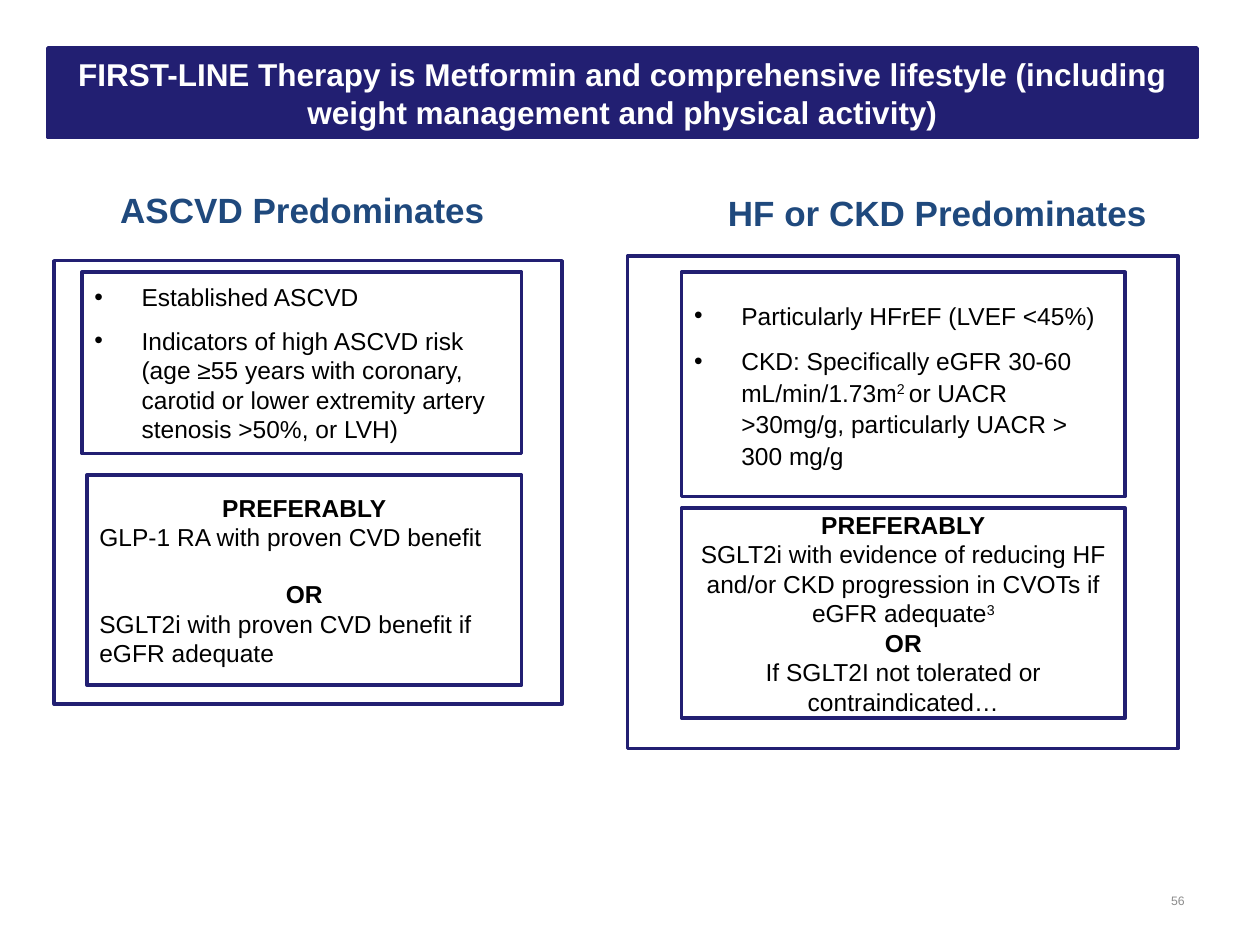
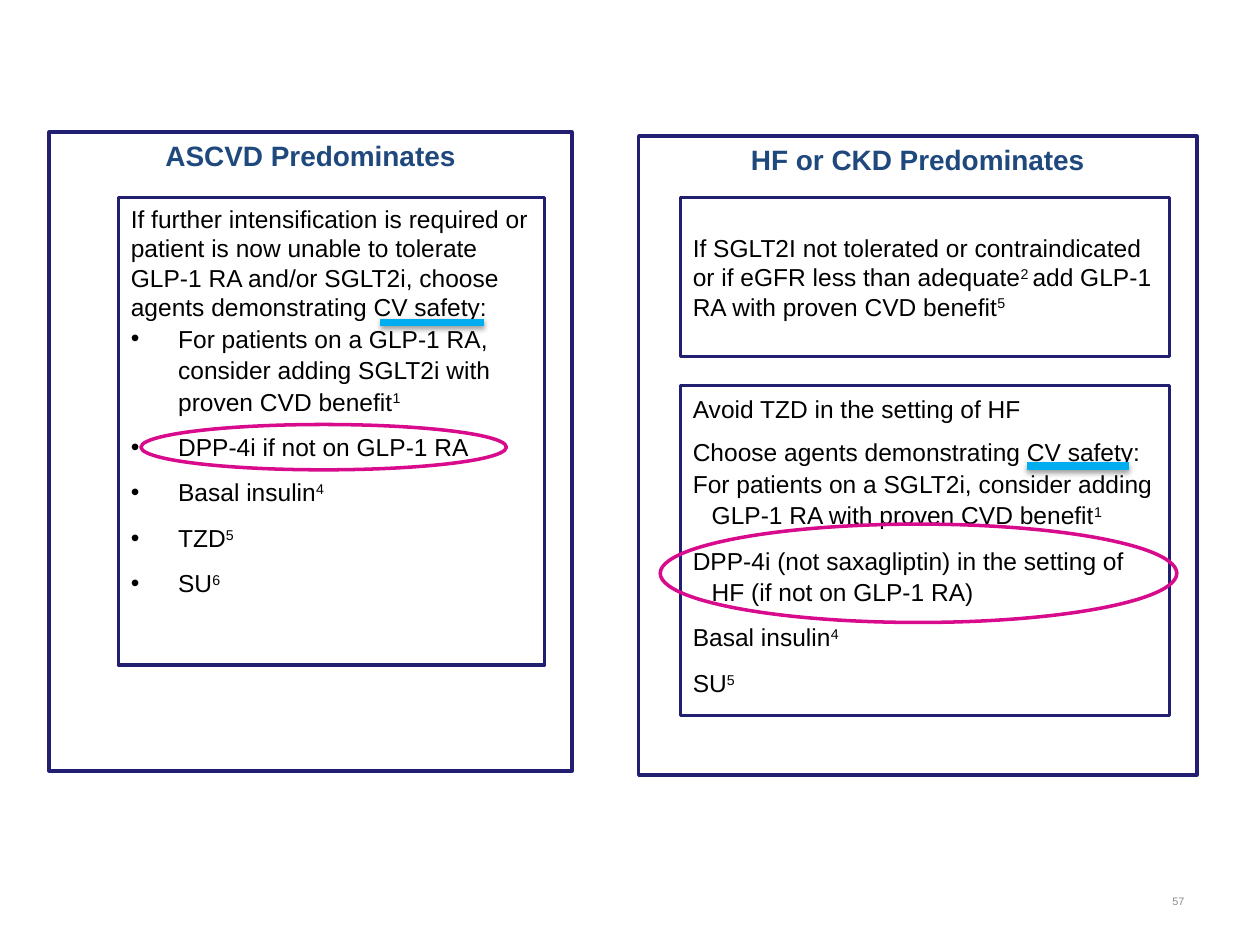
from dataclasses import dataclass
from typing import Optional

from lxml.etree import SubElement
from pptx import Presentation
from pptx.dml.color import RGBColor
from pptx.enum.shapes import MSO_CONNECTOR as Connector, MSO_SHAPE as Preset
from pptx.enum.text import MSO_ANCHOR as Anchor, PP_ALIGN as Align
from pptx.oxml.ns import qn
from pptx.util import Pt


@dataclass(frozen=True)
class Theme:
    font: str = "Arial"
    navy: str = "221F72"
    blue: str = "1F497D"
    black: str = "000000"
    white: str = "FFFFFF"
    grey: str = "8C8C8C"
    magenta: str = "D80B8C"
    cyan: str = "00AEEF"
    banner: float = 18
    heading: float = 20
    panel_title: float = 16
    body: float = 14
    border: float = 2
    marker: float = 4.5


THEME = Theme()


@dataclass(frozen=True)
class Area:
    left: float
    top: float
    width: float
    height: float

    def lengths(self) -> tuple:
        return Pt(self.left), Pt(self.top), Pt(self.width), Pt(self.height)


@dataclass(frozen=True)
class Style:
    size: float = THEME.body
    color: str = THEME.black
    bold: bool = False
    align: Align = Align.LEFT
    indent: float = 0
    bullet: bool = False
    spacing: float = 1
    before: float = 0
    after: float = 0


PLAIN = Style()
CENTERED = Style(align=Align.CENTER)
STRONG = Style(bold=True, align=Align.CENTER)
STRONG_APART = Style(bold=True, align=Align.CENTER, before=16)
BULLET = Style(indent=27, bullet=True, after=8)
LOOSE_BULLET = Style(indent=27, bullet=True, spacing=1.07, after=8)
HANGING = Style(indent=10.8, spacing=1.07, after=8)
BANNER = Style(THEME.banner, THEME.white, True, Align.CENTER)
HEADING = Style(THEME.heading, THEME.blue, True, Align.CENTER)
PANEL_TITLE = Style(THEME.panel_title, THEME.blue, True, Align.CENTER)


@dataclass(frozen=True)
class Line:
    text: str
    style: Style = PLAIN


@dataclass(frozen=True)
class Panel:
    area: Area
    lines: tuple = ()
    anchor: Anchor = Anchor.MIDDLE
    fill: str = THEME.white


@dataclass(frozen=True)
class Underline:
    left: float
    right: float
    top: float


@dataclass(frozen=True)
class Page:
    number: str
    number_size: float
    panels: tuple
    headings: tuple = ()
    ovals: tuple = ()
    underlines: tuple = ()


ASCVD = "ASCVD Predominates"
HF_CKD = "HF or CKD Predominates"
NUMBER_AREA = Area(516.2, 500.4, 167.8, 28.8)

PAGES = (
    Page(
        number="56",
        number_size=7,
        panels=(
            Panel(Area(27.4, 27.4, 656.6, 51.1), (
                Line("FIRST-LINE Therapy is Metformin and comprehensive lifestyle "
                     "(including weight management and physical activity)", BANNER),
            ), fill=THEME.navy),
            Panel(Area(31, 149, 290.2, 253.4)),
            Panel(Area(46.8, 155.5, 251.3, 103.7), (
                Line("Established ASCVD", BULLET),
                Line("Indicators of high ASCVD risk (age ≥55 years with coronary, "
                     "carotid or lower extremity artery stenosis >50%, or LVH)", BULLET),
            )),
            Panel(Area(49.7, 271.4, 248.4, 120.2), (
                Line("PREFERABLY", STRONG),
                Line("GLP-1 RA with proven CVD benefit"),
                Line("OR", STRONG_APART),
                Line("SGLT2i with proven CVD benefit if eGFR adequate"),
            )),
            Panel(Area(358.6, 146.2, 314.6, 281.5)),
            Panel(Area(389.5, 155.5, 253.4, 128.2), (
                Line("Particularly HFrEF (LVEF <45%)", LOOSE_BULLET),
                Line("CKD: Specifically eGFR 30-60 mL/min/1.73m^2 ^or UACR >30mg/g, "
                     "particularly UACR > 300 mg/g", LOOSE_BULLET),
            )),
            Panel(Area(389.5, 290.2, 253.4, 120.2), (
                Line("PREFERABLY", STRONG),
                Line("SGLT2i with evidence of reducing HF and/or CKD progression "
                     "in CVOTs if eGFR adequate^3", CENTERED),
                Line("OR", STRONG),
                Line("If SGLT2I not tolerated or contraindicated…", CENTERED),
            )),
        ),
        headings=(
            (Area(60.5, 104.4, 224.6, 31.7), Line(ASCVD, HEADING)),
            (Area(355.7, 105.8, 360, 46.1), Line(HF_CKD, HEADING)),
        ),
    ),
    Page(
        number="57",
        number_size=6.2,
        panels=(
            Panel(Area(28.1, 75.6, 298.8, 365), (Line(ASCVD, PANEL_TITLE),), Anchor.TOP),
            Panel(Area(365, 77.8, 319, 365), (Line(HF_CKD, PANEL_TITLE),), Anchor.TOP),
            Panel(Area(67.7, 113, 243.4, 267.1), (
                Line("If further intensification is required or patient is now unable "
                     "to tolerate GLP-1 RA and/or SGLT2i, choose agents demonstrating "
                     "CV safety:"),
                Line("For patients on a GLP-1 RA, consider adding SGLT2i with proven "
                     "CVD benefit^1", LOOSE_BULLET),
                Line("DPP-4i if not on GLP-1 RA", LOOSE_BULLET),
                Line("Basal insulin^4", LOOSE_BULLET),
                Line("TZD^5", LOOSE_BULLET),
                Line("SU^6", LOOSE_BULLET),
            ), Anchor.TOP),
            Panel(Area(388.8, 113, 279.4, 90.7), (
                Line("If SGLT2I not tolerated or contraindicated or if eGFR less than "
                     "adequate^2 ^add GLP-1 RA with proven CVD benefit^5"),
            )),
            Panel(Area(388.8, 220.3, 279.4, 188.6), (
                Line("Avoid TZD in the setting of HF", HANGING),
                Line("Choose agents demonstrating CV safety:"),
                Line("For patients on a SGLT2i, consider adding GLP-1 RA with proven "
                     "CVD benefit^1", HANGING),
                Line("DPP-4i (not saxagliptin) in the setting of HF "
                     "(if not on GLP-1 RA)", HANGING),
                Line("Basal insulin^4", HANGING),
                Line("SU^5", HANGING),
            ), Anchor.TOP),
        ),
        ovals=(Area(80.6, 242.6, 208.8, 25.9), Area(377.3, 299.5, 295.2, 56.2)),
        underlines=(Underline(217.4, 276.5, 184.3), Underline(586.8, 645.1, 266.4)),
    ),
)


def write(frame, lines: tuple, anchor: Anchor) -> None:
    frame.word_wrap = True
    frame.vertical_anchor = anchor
    for index, line in enumerate(lines):
        para = frame.paragraphs[0] if index == 0 else frame.add_paragraph()
        style = line.style
        properties = para._p.get_or_add_pPr()
        if style.indent:
            properties.set("marL", str(Pt(style.indent)))
            properties.set("indent", str(-Pt(style.indent)))
        if style.bullet:
            SubElement(properties, qn("a:buFont"), typeface=THEME.font)
            SubElement(properties, qn("a:buChar"), char="•")
        para.alignment = style.align
        para.line_spacing = style.spacing
        para.space_before = Pt(style.before)
        para.space_after = Pt(style.after)
        for position, text in enumerate(line.text.split("^")):
            if not text:
                continue
            span = para.add_run()
            span.text = text
            span.font.name = THEME.font
            span.font.size = Pt(style.size)
            span.font.bold = style.bold
            span.font.color.rgb = RGBColor.from_string(style.color)
            if position % 2:
                span._r.get_or_add_rPr().set("baseline", "30000")


def draw_shape(slide, preset: Preset, area: Area, border: str, fill: Optional[str] = None):
    shape = slide.shapes.add_shape(preset, *area.lengths())
    shape.shadow.inherit = False
    if fill:
        shape.fill.solid()
        shape.fill.fore_color.rgb = RGBColor.from_string(fill)
    else:
        shape.fill.background()
    shape.line.color.rgb = RGBColor.from_string(border)
    shape.line.width = Pt(THEME.border)
    return shape


def draw_text(slide, area: Area, line: Line, anchor: Anchor = Anchor.TOP) -> None:
    box = slide.shapes.add_textbox(*area.lengths())
    write(box.text_frame, (line,), anchor)


def draw_underline(slide, mark: Underline) -> None:
    rule = slide.shapes.add_connector(
        Connector.STRAIGHT, Pt(mark.right), Pt(mark.top), Pt(mark.left), Pt(mark.top))
    rule.line.color.rgb = RGBColor.from_string(THEME.cyan)
    rule.line.width = Pt(THEME.marker)
    effects = SubElement(rule._element.spPr, qn("a:effectLst"))
    shadow = SubElement(effects, qn("a:outerShdw"), blurRad=str(Pt(3.1)),
                        dist=str(Pt(1.6)), dir="5400000", rotWithShape="0")
    tint = SubElement(shadow, qn("a:srgbClr"), val=THEME.black)
    SubElement(tint, qn("a:alpha"), val="38000")


def draw_page(deck, page: Page) -> None:
    slide = deck.slides.add_slide(deck.slide_layouts[6])
    number_style = Style(page.number_size, THEME.grey, align=Align.RIGHT)
    draw_text(slide, NUMBER_AREA, Line(page.number, number_style), Anchor.MIDDLE)
    for panel in page.panels:
        shape = draw_shape(slide, Preset.RECTANGLE, panel.area, THEME.navy, panel.fill)
        if panel.lines:
            write(shape.text_frame, panel.lines, panel.anchor)
    for area, line in page.headings:
        draw_text(slide, area, line)
    for area in page.ovals:
        draw_shape(slide, Preset.OVAL, area, THEME.magenta)
    for mark in page.underlines:
        draw_underline(slide, mark)


def main() -> None:
    deck = Presentation()
    deck.slide_width, deck.slide_height = Pt(720), Pt(540)
    for page in PAGES:
        draw_page(deck, page)
    deck.save("out.pptx")


if __name__ == "__main__":
    main()
